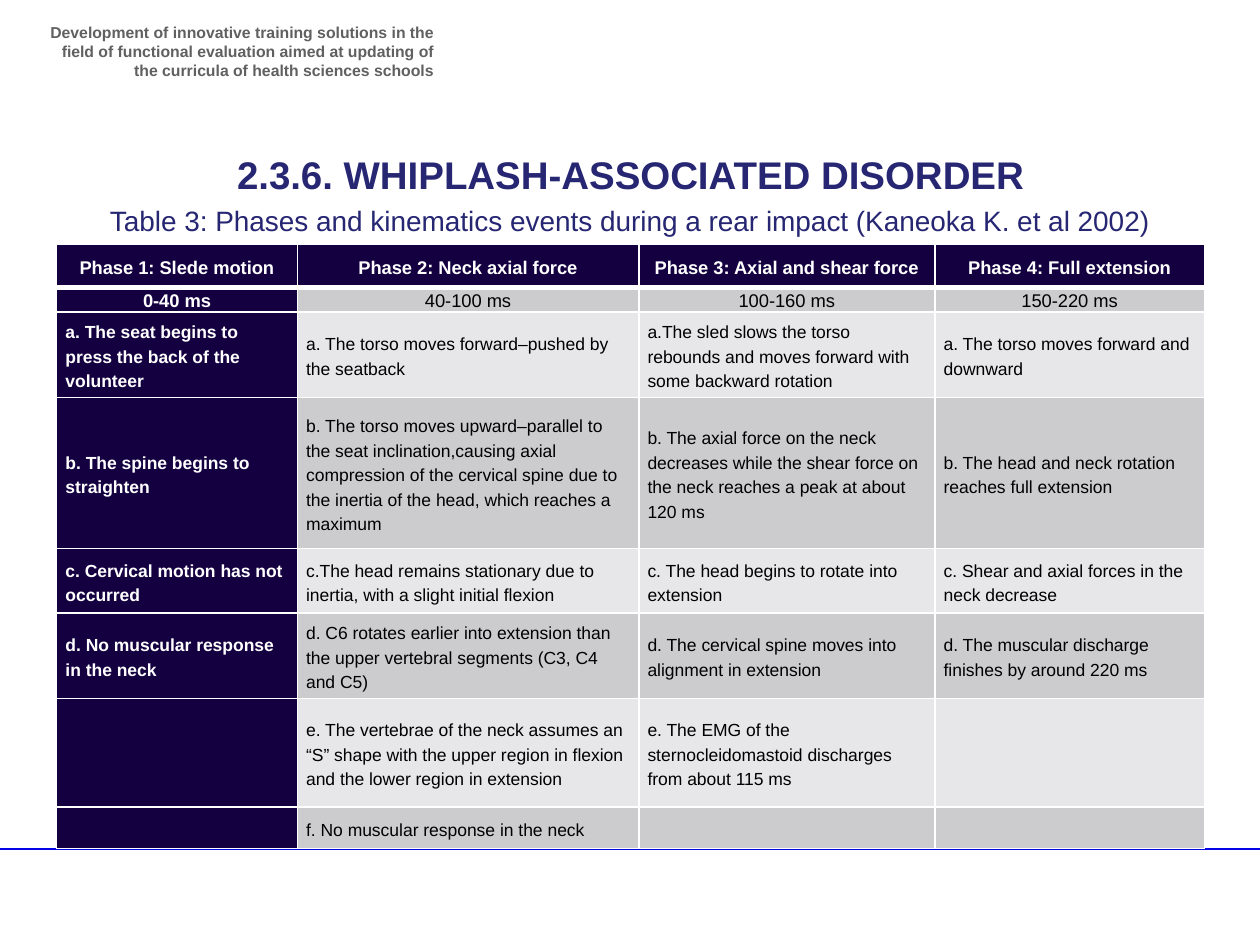
from dataclasses import dataclass

from lxml import etree
from pptx import Presentation
from pptx.dml.color import RGBColor
from pptx.enum.shapes import MSO_CONNECTOR
from pptx.enum.text import MSO_ANCHOR, PP_ALIGN
from pptx.oxml.ns import qn
from pptx.util import Inches, Pt

CENTER, LEFT, RIGHT = PP_ALIGN.CENTER, PP_ALIGN.LEFT, PP_ALIGN.RIGHT
MIDDLE = MSO_ANCHOR.MIDDLE
STRAIGHT = MSO_CONNECTOR.STRAIGHT

WHITE = RGBColor(0xFF, 0xFF, 0xFF)
BLACK = RGBColor(0x00, 0x00, 0x00)
GREY = RGBColor(0x60, 0x60, 0x60)
NAVY = RGBColor(0x26, 0x26, 0x73)
DEEP_NAVY = RGBColor(0x14, 0x00, 0x41)
LIGHT_BAND = RGBColor(0xE7, 0xE7, 0xE9)
DARK_BAND = RGBColor(0xCC, 0xCC, 0xCF)
FOOTER_BLUE = RGBColor(0x04, 0x04, 0xE6)

FONT = "Arial"
SLIDE_WIDTH, SLIDE_HEIGHT = Inches(10), Inches(7.5)


@dataclass(frozen=True)
class Label:
    """A text box; its lengths are percentages of the slide's size."""
    text: str
    left: float
    top: float
    width: float
    height: float
    size: float
    color: RGBColor
    bold: bool = False
    align: PP_ALIGN = CENTER


LABELS = [
    Label("Development of innovative training solutions in the ﬁeld of functional "
          "evaluation aimed at updating of the curricula of health sciences schools",
          2.8, 1.73, 32.6, 6.27, 9, GREY, True, RIGHT),
    Label("2.3.6. WHIPLASH-ASSOCIATED DISORDER",
          4.5, 15.33, 91.1, 6.27, 22, NAVY, True),
    Label("Table 3: Phases and kinematics events during a rear impact "
          "(Kaneoka K. et al 2002)",
          5.5, 20.93, 89, 4.93, 16, NAVY),
]

TABLE_LEFT, TABLE_TOP = 4.5, 25.87
COLUMN_WIDTHS = [19.1, 27.1, 23.5, 21.4]
ROW_HEIGHTS = [4.53, 2.13, 9.07, 16, 6.8, 9.07, 11.47, 4.4]
PHASES = [
    ["Phase 1: Slede motion", "Phase 2: Neck axial force",
     "Phase 3: Axial and shear force", "Phase 4: Full extension"],
    ["0-40 ms", "40-100 ms", "100-160 ms", "150-220 ms"],
    ["a. The seat begins to press the back of the volunteer",
     "a. The torso moves forward–pushed by the seatback",
     "a.The sled slows the torso rebounds and moves forward with some backward rotation",
     "a. The torso moves forward and downward"],
    ["b. The spine begins to straighten",
     "b. The torso moves upward–parallel to the seat inclination,causing axial "
     "compression of the cervical spine due to the inertia of the head, which "
     "reaches a maximum",
     "b. The axial force on the neck decreases while the shear force on the neck "
     "reaches a peak at about 120 ms",
     "b. The head and neck rotation reaches full extension"],
    ["c. Cervical motion has not occurred",
     "c.The head remains stationary due to inertia, with a slight initial flexion",
     "c. The head begins to rotate into extension",
     "c. Shear and axial forces in the neck decrease"],
    ["d. No muscular response in the neck",
     "d. C6 rotates earlier into extension than the upper vertebral segments "
     "(C3, C4 and C5)",
     "d. The cervical spine moves into alignment in extension",
     "d. The muscular discharge finishes by around 220 ms"],
    ["",
     "e. The vertebrae of the neck assumes an “S” shape with the upper region in "
     "flexion and the lower region in extension",
     "e. The EMG of the sternocleidomastoid discharges from about 115 ms",
     ""],
    ["", "f. No muscular response in the neck", "", ""],
]


def across(percent: float) -> int:
    return round(SLIDE_WIDTH * percent / 100)


def down(percent: float) -> int:
    return round(SLIDE_HEIGHT * percent / 100)


def add_run(paragraph, text: str, size: float, color: RGBColor, bold: bool) -> None:
    run = paragraph.add_run()
    run.text = text
    run.font.name = FONT
    run.font.size = Pt(size)
    run.font.bold = bold
    run.font.color.rgb = color


def add_label(slide, label: Label) -> None:
    box = slide.shapes.add_textbox(across(label.left), down(label.top),
                                   across(label.width), down(label.height))
    box.text_frame.word_wrap = True
    paragraph = box.text_frame.paragraphs[0]
    paragraph.alignment = label.align
    add_run(paragraph, label.text, label.size, label.color, label.bold)


def add_footer_rule(slide) -> None:
    level = down(89.87)
    rule = slide.shapes.add_connector(STRAIGHT, across(-0.5), level, SLIDE_WIDTH, level)
    rule.line.color.rgb = FOOTER_BLUE
    rule.line.width = Pt(1)
    etree.SubElement(rule._element.spPr, qn("a:effectLst"))


def set_borders(cell, row: int) -> None:
    """White grid lines, heavier between the header and the body."""
    widths = {"L": 1, "R": 1, "T": 3 if row == 1 else 1, "B": 3 if row == 0 else 1}
    properties = cell._tc.get_or_add_tcPr()
    for side, width in widths.items():
        line = etree.SubElement(properties, qn(f"a:ln{side}"), w=str(Pt(width)))
        fill = etree.SubElement(line, qn("a:solidFill"))
        etree.SubElement(fill, qn("a:srgbClr"), val=str(WHITE))


def fill_cell(cell, text: str, row: int, column: int) -> None:
    heading = row == 0 or column == 0
    centered = row < 2
    size = 10.5 if centered else 10
    set_borders(cell, row)
    cell.fill.solid()
    band = DARK_BAND if row % 2 else LIGHT_BAND
    cell.fill.fore_color.rgb = DEEP_NAVY if heading else band
    cell.vertical_anchor = MIDDLE
    cell.margin_left = cell.margin_right = Inches(0.07)
    cell.margin_top = cell.margin_bottom = 0
    paragraph = cell.text_frame.paragraphs[0]
    paragraph.alignment = CENTER if centered else LEFT
    paragraph.line_spacing = Pt(14)
    paragraph.font.size = Pt(size)
    if text:
        add_run(paragraph, text, size, WHITE if heading else BLACK, heading)


def add_phase_table(slide) -> None:
    table = slide.shapes.add_table(
        len(ROW_HEIGHTS), len(COLUMN_WIDTHS), across(TABLE_LEFT), down(TABLE_TOP),
        across(sum(COLUMN_WIDTHS)), down(sum(ROW_HEIGHTS))).table
    table.first_row = table.horz_banding = False
    for column, width in zip(table.columns, COLUMN_WIDTHS):
        column.width = across(width)
    for row, height in zip(table.rows, ROW_HEIGHTS):
        row.height = down(height)
    for r, texts in enumerate(PHASES):
        for c, text in enumerate(texts):
            fill_cell(table.cell(r, c), text, r, c)


def main() -> None:
    presentation = Presentation()
    presentation.slide_width = SLIDE_WIDTH
    presentation.slide_height = SLIDE_HEIGHT
    slide = presentation.slides.add_slide(presentation.slide_layouts[6])
    add_footer_rule(slide)
    for label in LABELS:
        add_label(slide, label)
    add_phase_table(slide)
    presentation.save("out.pptx")


if __name__ == "__main__":
    main()
